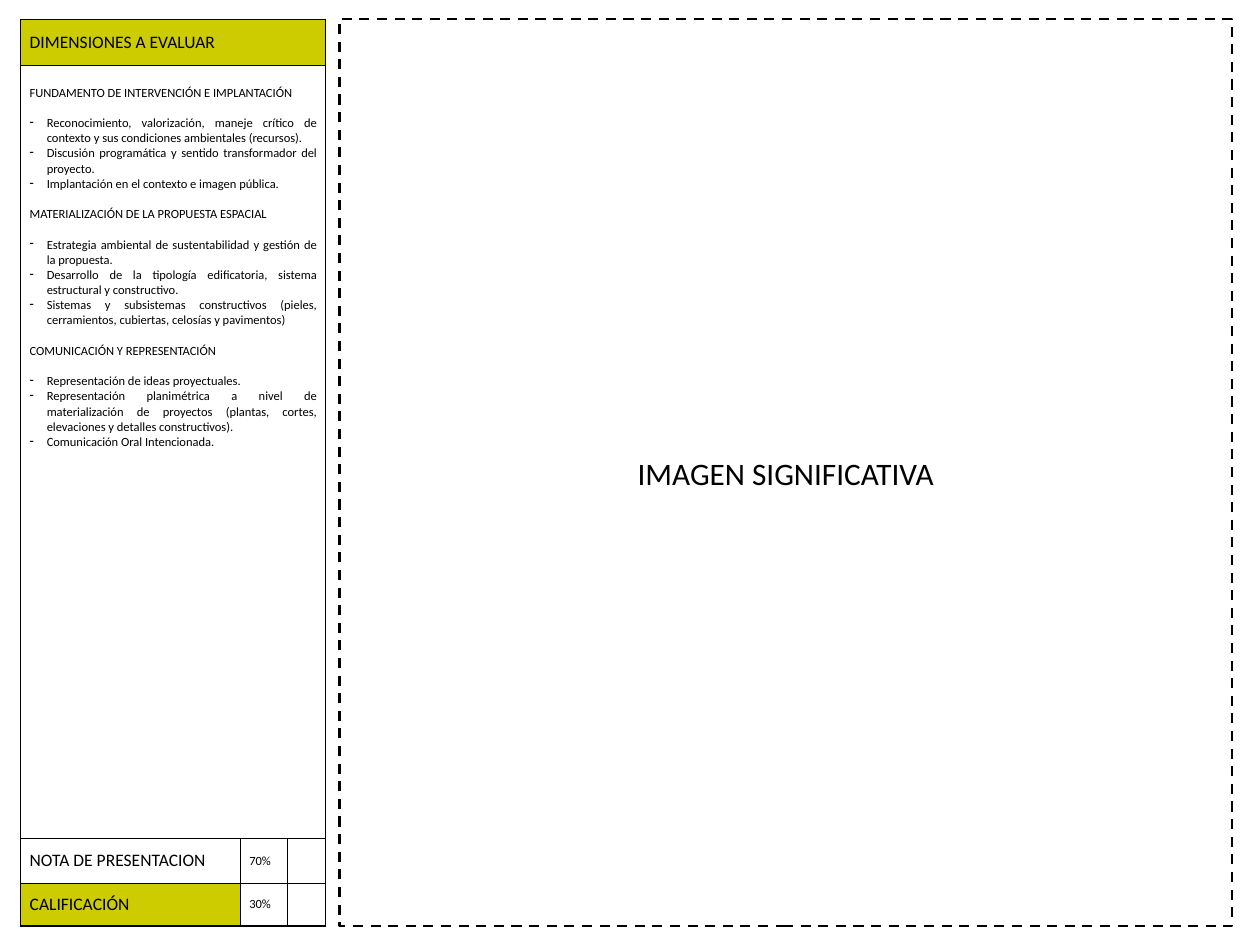
"""Build the evaluation slide: a grading table beside a dashed image frame."""
from lxml import etree
from pptx import Presentation
from pptx.dml.color import RGBColor
from pptx.enum.dml import MSO_LINE
from pptx.enum.shapes import MSO_SHAPE
from pptx.enum.text import MSO_ANCHOR, PP_ALIGN
from pptx.oxml.ns import qn
from pptx.util import Inches, Pt

RECTANGLE = MSO_SHAPE.RECTANGLE
DASH = MSO_LINE.DASH
MIDDLE, TOP = MSO_ANCHOR.MIDDLE, MSO_ANCHOR.TOP
JUSTIFY, CENTER = PP_ALIGN.JUSTIFY, PP_ALIGN.CENTER
BLACK = RGBColor(0x00, 0x00, 0x00)
WHITE = RGBColor(0xFF, 0xFF, 0xFF)
OLIVE = RGBColor(0xCC, 0xCC, 0x00)
FONT = "Calibri"

FRAME_TEXT = "IMAGEN SIGNIFICATIVA"
HEADER = "DIMENSIONES A EVALUAR"
DIMENSIONS = [
    ("FUNDAMENTO DE INTERVENCIÓN E IMPLANTACIÓN", [
        "Reconocimiento, valorización, maneje crítico de contexto y sus condiciones ambientales (recursos).",
        "Discusión programática y sentido transformador del proyecto.",
        "Implantación en el contexto e imagen pública.",
    ]),
    ("MATERIALIZACIÓN DE LA PROPUESTA ESPACIAL", [
        "Estrategia ambiental de sustentabilidad y gestión de la propuesta.",
        "Desarrollo de la tipología edificatoria, sistema estructural y constructivo.",
        "Sistemas y subsistemas constructivos (pieles, cerramientos, cubiertas, celosías y pavimentos)",
    ]),
    ("COMUNICACIÓN Y REPRESENTACIÓN", [
        "Representación de ideas proyectuales.",
        "Representación planimétrica a nivel de materialización de proyectos (plantas, cortes, elevaciones y detalles constructivos).",
        "Comunicación Oral Intencionada.",
    ]),
]
GRADES = [("NOTA DE PRESENTACION", "70%", WHITE), ("CALIFICACIÓN", "30%", OLIVE)]

COLUMN_WIDTHS = [2.44, 0.53, 0.42]
ROW_HEIGHTS = [0.52, 8.59, 0.49, 0.48]
TABLE_LEFT, FRAME_LEFT, TOP_EDGE, FRAME_WIDTH = 0.23, 3.77, 0.21, 9.92
TEXT_SIZE, LABEL_SIZE, FRAME_SIZE = 10, 14, 25
LINE_GAP = 12.2
BULLET_INDENT = 0.19


def add_text(text_frame, text, size, alignment=JUSTIFY, space_before=0):
    paragraph = text_frame.paragraphs[0]
    if paragraph.runs:
        paragraph = text_frame.add_paragraph()
    paragraph.alignment = alignment
    paragraph.space_before = Pt(space_before)
    run = paragraph.add_run()
    run.text = text
    for name, value in {"name": FONT, "size": Pt(size), "bold": False}.items():
        setattr(run.font, name, value)
    run.font.color.rgb = BLACK
    return paragraph


def add_bullet(paragraph):
    properties = paragraph._p.get_or_add_pPr()
    properties.set("marL", str(Inches(BULLET_INDENT)))
    properties.set("indent", str(-Inches(BULLET_INDENT)))
    etree.SubElement(properties, qn("a:buChar")).set("char", "-")


def set_borders(cell, widths):
    properties = cell._tc.get_or_add_tcPr()
    for side, width in widths.items():
        line = etree.SubElement(properties, qn(f"a:ln{side}"), w=str(Pt(width)))
        fill = etree.SubElement(line, qn("a:solidFill"))
        etree.SubElement(fill, qn("a:srgbClr")).set("val", str(BLACK))


def add_frame(slide):
    frame = slide.shapes.add_shape(
        RECTANGLE, Inches(FRAME_LEFT), Inches(TOP_EDGE),
        Inches(FRAME_WIDTH), Inches(sum(ROW_HEIGHTS)))
    frame.shadow.inherit = False
    frame.fill.background()
    frame.line.color.rgb = BLACK
    frame.line.width = Pt(2)
    frame.line.dash_style = DASH
    frame.text_frame.vertical_anchor = MIDDLE
    add_text(frame.text_frame, FRAME_TEXT, FRAME_SIZE, CENTER)


def add_grid(slide):
    table = slide.shapes.add_table(
        len(ROW_HEIGHTS), len(COLUMN_WIDTHS), Inches(TABLE_LEFT), Inches(TOP_EDGE),
        Inches(sum(COLUMN_WIDTHS)), Inches(sum(ROW_HEIGHTS))).table
    table.first_row = table.horz_banding = False
    for column, width in zip(table.columns, COLUMN_WIDTHS):
        column.width = Inches(width)
    for index, (row, height) in enumerate(zip(table.rows, ROW_HEIGHTS)):
        row.height = Inches(height)
        for position, cell in enumerate(row.cells):
            set_borders(cell, {
                "L": 0.5 if index > 1 and position == 1 else 1,
                "R": 0.5 if index > 1 and position == 0 else 1,
                "T": 0.5 if index in (0, 3) else 1,
                "B": 0.5 if index == 2 else 1,
            })
            cell.fill.background()
            cell.vertical_anchor = MIDDLE
    for index in (0, 1):
        table.cell(index, 0).merge(table.cell(index, len(COLUMN_WIDTHS) - 1))
    return table


def fill_table(table):
    header, body = table.cell(0, 0), table.cell(1, 0)
    add_text(header.text_frame, HEADER, LABEL_SIZE)
    header.fill.solid()
    header.fill.fore_color.rgb = OLIVE

    body.vertical_anchor = TOP
    body.margin_top = Inches(0.22)
    for number, (heading, points) in enumerate(DIMENSIONS):
        add_text(body.text_frame, heading, TEXT_SIZE, space_before=LINE_GAP if number else 0)
        for order, point in enumerate(points):
            gap = 0 if order else LINE_GAP
            add_bullet(add_text(body.text_frame, point, TEXT_SIZE, space_before=gap))

    for index, (label, weight, color) in enumerate(GRADES, start=2):
        label_cell = table.cell(index, 0)
        add_text(label_cell.text_frame, label, LABEL_SIZE)
        label_cell.fill.solid()
        label_cell.fill.fore_color.rgb = color
        add_text(table.cell(index, 1).text_frame, weight, TEXT_SIZE)


def main():
    presentation = Presentation()
    presentation.slide_width, presentation.slide_height = Inches(14), Inches(10.5)
    slide = presentation.slides.add_slide(presentation.slide_layouts[6])
    add_frame(slide)
    fill_table(add_grid(slide))
    presentation.save("out.pptx")


if __name__ == "__main__":
    main()
